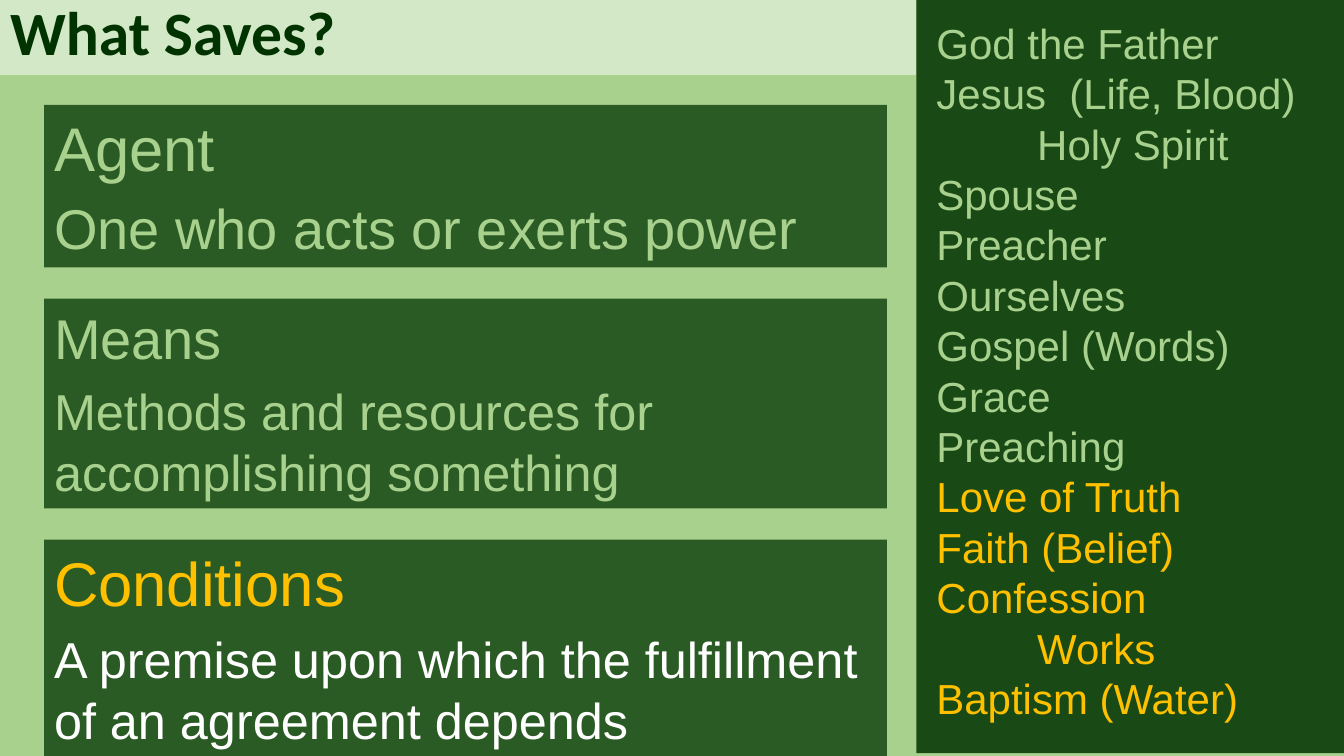
from pptx import Presentation
from pptx.dml.color import RGBColor
from pptx.enum import shapes, text
from pptx.oxml import ns
from pptx.util import Pt
from lxml import etree

DARK, LEAF, PALE, GOLD, WHITE = "003300", "A9D18E", "E2F0D9", "FFC000", "FFFFFF"


def rgb(code):
    return RGBColor.from_string(code)


class SlideBuilder:
    font = "Arial"

    def __init__(self, slide):
        self.slide = slide

    def background(self, color):
        fill = self.slide.background.fill
        fill.solid()
        fill.fore_color.rgb = rgb(color)

    def panel(self, shape, frame, color, opacity, insets=(7.2, 3.6, 7.2, 3.6)):
        """Place a shape, give it a translucent fill and prepare its text frame."""
        shape.left, shape.top, shape.width, shape.height = map(Pt, frame)
        shape.fill.solid()
        shape.fill.fore_color.rgb = rgb(color)
        tint = shape.fill._xPr.find(".//" + ns.qn("a:srgbClr"))
        etree.SubElement(tint, ns.qn("a:alpha"), val=str(opacity * 1000))
        shape.line.fill.background()
        body = shape.text_frame
        body.word_wrap = True
        body.auto_size = text.MSO_AUTO_SIZE.NONE
        body.vertical_anchor = text.MSO_ANCHOR.TOP
        (body.margin_left, body.margin_top,
         body.margin_right, body.margin_bottom) = map(Pt, insets)
        return body

    def line(self, body, index, wording, size, color, before=0, indent=0,
             spacing=1.0, font=None, bold=False):
        paragraph = body.paragraphs[0] if index == 0 else body.add_paragraph()
        paragraph.alignment = text.PP_ALIGN.LEFT
        paragraph.space_before = Pt(before)
        paragraph.line_spacing = spacing
        props = paragraph._p.get_or_add_pPr()
        props.set("marL", str(Pt(indent)))
        props.set("indent", "0")
        etree.SubElement(props, ns.qn("a:buNone"))
        run = paragraph.add_run()
        run.text = wording
        run.font.name = font or self.font
        run.font.size = Pt(size)
        run.font.bold = bold
        run.font.color.rgb = rgb(color)

    def title(self, wording):
        body = self.panel(self.slide.shapes.title, (0, -2, 654.5, 55.5), PALE, 75)
        body.vertical_anchor = text.MSO_ANCHOR.MIDDLE
        self.line(body, 0, wording, 44, DARK, spacing=0.9, font="Calibri", bold=True)

    def sidebar(self, entries):
        body = self.panel(self.slide.placeholders[1], (654.5, -2, 306, 540),
                          DARK, 85, (14.4, 14.4, 7.2, 3.6))
        for index, (wording, color, indent) in enumerate(entries):
            self.line(body, index, wording, 30, color, indent=indent)

    def definition(self, top, height, term, meaning):
        box = self.slide.shapes.add_shape(shapes.MSO_SHAPE.RECTANGLE, 0, 0, 0, 0)
        box.shadow.inherit = False
        body = self.panel(box, (31.5, top, 602, height), DARK, 74)
        self.line(body, 0, *term, before=8)
        self.line(body, 1, *meaning, before=7)


def main():
    deck = Presentation()
    deck.slide_width, deck.slide_height = Pt(960), Pt(540)
    builder = SlideBuilder(deck.slides.add_slide(deck.slide_layouts[1]))
    builder.background(LEAF)
    builder.title("What Saves?")
    builder.sidebar([
        ("God the Father", LEAF, 0),
        ("Jesus  (Life, Blood)", LEAF, 0),
        ("Holy Spirit", LEAF, 72),
        ("Spouse", LEAF, 0),
        ("Preacher", LEAF, 0),
        ("Ourselves", LEAF, 0),
        ("Gospel (Words)", LEAF, 0),
        ("Grace", LEAF, 0),
        ("Preaching", LEAF, 0),
        ("Love of Truth", GOLD, 0),
        ("Faith (Belief)", GOLD, 0),
        ("Confession", GOLD, 0),
        ("Works", GOLD, 72),
        ("Baptism (Water)", GOLD, 0),
    ])
    definitions = [
        (116, ("Agent", 44, LEAF), ("One who acts or exerts power", 40, LEAF)),
        (150, ("Means", 40, LEAF),
         ("Methods and resources for accomplishing something", 36, LEAF)),
        (156, ("Conditions", 44, GOLD),
         ("A premise upon which the fulfillment of an agreement depends", 36, WHITE)),
    ]
    top, gap = 75, 22.25
    for height, term, meaning in definitions:
        builder.definition(top, height, term, meaning)
        top += height + gap
    deck.save("out.pptx")


if __name__ == "__main__":
    main()
